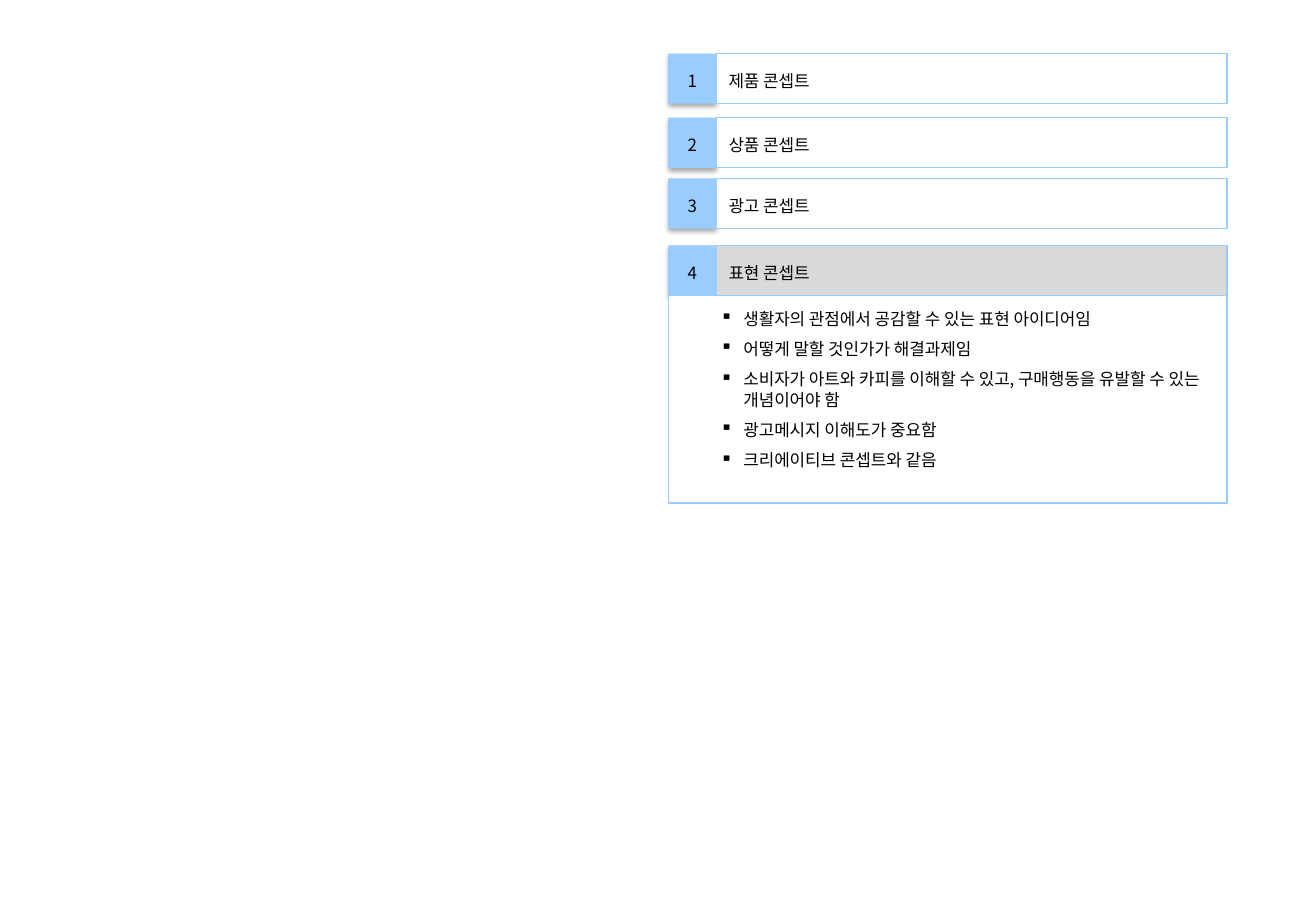
"""Build a slide listing four concepts, with the fourth one explained."""
from lxml import etree
from pptx import Presentation
from pptx import util as u
from pptx.dml.color import RGBColor
from pptx.enum import shapes, text
from pptx.oxml import parse_xml
from pptx.oxml.ns import nsdecls, qn

CONCEPTS = [
    ("제품 콘셉트", 1.12),
    ("상품 콘셉트", 2.46),
    ("광고 콘셉트", 3.73),
    ("표현 콘셉트", 5.13),
]
DETAILS = [
    "생활자의 관점에서 공감할 수 있는 표현 아이디어임",
    "어떻게 말할 것인가가 해결과제임",
    "소비자가 아트와 카피를 이해할 수 있고, 구매행동을 유발할 수 있는 개념이어야 함",
    "광고메시지 이해도가 중요함",
    "크리에이티브 콘셉트와 같음",
]
BLUE = RGBColor(0x99, 0xCC, 0xFF)
GRAY = RGBColor(0xD9, 0xD9, 0xD9)
WHITE = RGBColor(0xFF, 0xFF, 0xFF)
BLACK = RGBColor(0, 0, 0)
FONT = "Noto Sans CJK KR"
FONT_FORMAT = {"name": FONT, "size": u.Pt(10)}
LEFT, BADGE_WIDTH, ROW_HEIGHT = 13.97, 1.0, 1.05
LABEL_LEFT, LABEL_WIDTH = 14.98, 10.67
PANEL_WIDTH, PANEL_HEIGHT = 11.68, 4.34
SHADOW = (
    f'<a:effectLst {nsdecls("a")}>'
    '<a:outerShdw blurRad="39370" dist="22860" dir="5400000" rotWithShape="0">'
    '<a:srgbClr val="000000"><a:alpha val="35000"/></a:srgbClr>'
    "</a:outerShdw></a:effectLst>"
)


def add_box(page, kind, frame, fill, outlined=True):
    box = page.shapes.add_shape(kind, *map(u.Cm, frame))
    box.shadow.inherit = False
    box.fill.solid()
    box.fill.fore_color.rgb = fill
    if outlined:
        box.line.color.rgb = BLUE
        box.line.width = u.Pt(0.75)
    else:
        box.line.fill.background()
    return box


def write(para, words):
    span = para.add_run()
    span.text = words
    for name, value in FONT_FORMAT.items():
        setattr(span.font, name, value)
    span.font.color.rgb = BLACK
    etree.SubElement(span.font._element, qn("a:ea")).set("typeface", FONT)


def add_row_box(page, frame, fill, words, align, outlined):
    box = add_box(page, shapes.MSO_SHAPE.ROUNDED_RECTANGLE, frame, fill, outlined)
    box.adjustments[0] = 0
    box.text_frame.vertical_anchor = text.MSO_ANCHOR.MIDDLE
    para = box.text_frame.paragraphs[0]
    para.alignment = align
    para.line_spacing = 1.2
    write(para, words)
    return box


def add_details(page):
    box = page.shapes.add_textbox(*map(u.Cm, (14.81, 6.32, 11.33, 3.68)))
    frame = box.text_frame
    frame.word_wrap = True
    for index, words in enumerate(DETAILS):
        para = frame.add_paragraph() if index else frame.paragraphs[0]
        if index:
            para.space_before = u.Pt(6)
        props = para._p.get_or_add_pPr()
        props.set("marL", str(u.Cm(0.48)))
        props.set("indent", str(-u.Cm(0.48)))
        etree.SubElement(props, qn("a:buChar")).set("char", "▪")
        write(para, words)


def main():
    deck = Presentation()
    deck.slide_width, deck.slide_height = u.Cm(27.51), u.Cm(19.05)
    page = deck.slides.add_slide(deck.slide_layouts[6])
    for number, (title, top) in enumerate(CONCEPTS, 1):
        badge = add_row_box(page, (LEFT, top, BADGE_WIDTH, ROW_HEIGHT), BLUE,
                            str(number), text.PP_ALIGN.CENTER, False)
        properties = badge._element.spPr
        properties.replace(properties.find(qn("a:effectLst")), parse_xml(SHADOW))
        fill = GRAY if number == len(CONCEPTS) else WHITE
        add_row_box(page, (LABEL_LEFT, top, LABEL_WIDTH, ROW_HEIGHT), fill,
                    title, text.PP_ALIGN.LEFT, True)
    panel_top = CONCEPTS[-1][1] + ROW_HEIGHT
    add_box(page, shapes.MSO_SHAPE.RECTANGLE,
            (LEFT, panel_top, PANEL_WIDTH, PANEL_HEIGHT), WHITE)
    add_details(page)
    deck.save("out.pptx")


if __name__ == "__main__":
    main()
